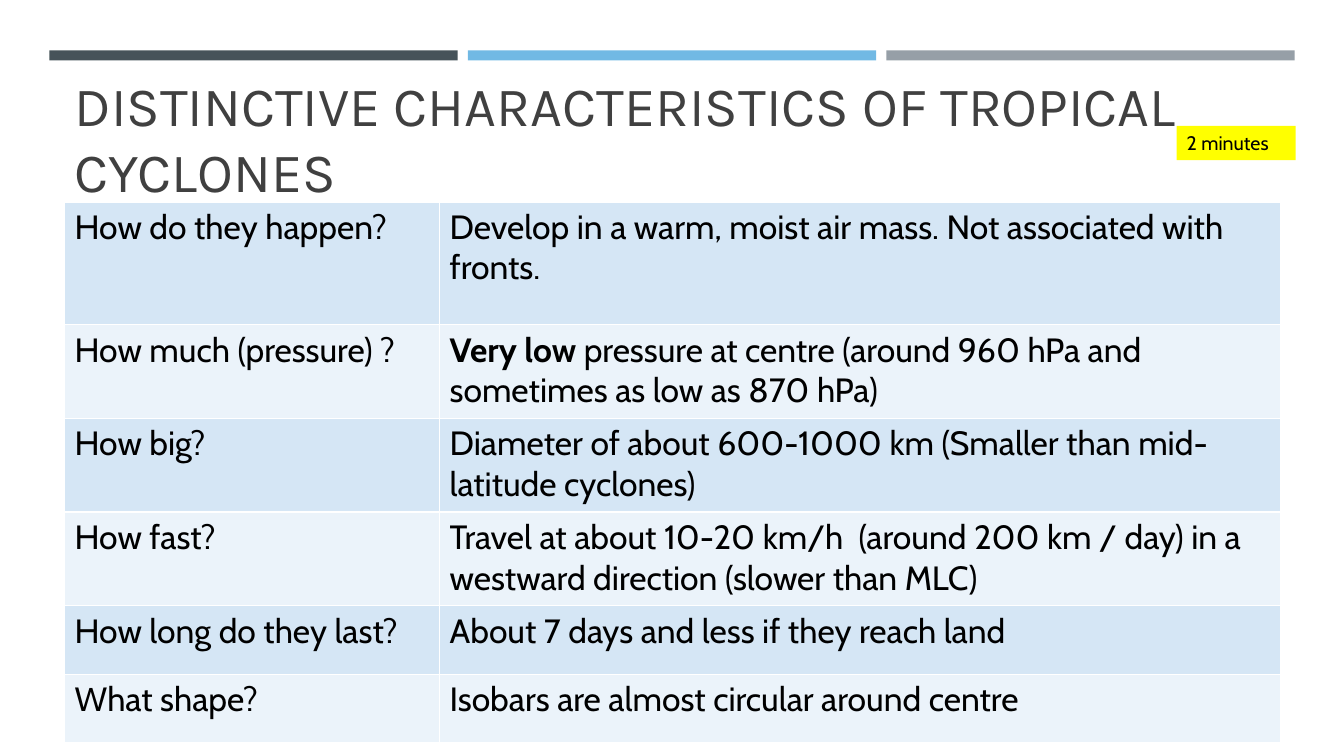
from pptx import Presentation
from pptx.dml.color import RGBColor
from pptx.enum import shapes, text
from pptx.oxml import parse_xml
from pptx.oxml.ns import nsdecls
from pptx.util import Inches, Pt

HUES = {
    "slate": "465359", "sky": "71B9E4", "grey": "969FA7",
    "title": "404040", "ink": "000000", "note": "FFFF00",
    "odd": "D5E6F5", "even": "EBF3FA", "rule": "FFFFFF",
}
FACTS = [
    ("How do they happen?",
     ["Develop in a warm, moist air mass. Not associated with fronts."]),
    ("How much (pressure) ?",
     ["Very low ", "pressure at centre (around 960 hPa and sometimes as low as 870 hPa)"]),
    ("How big?",
     ["Diameter of about 600-1000 km (Smaller than mid-latitude cyclones)"]),
    ("How fast?",
     ["Travel at about 10-20 km/h  (around 200 km / day) in a westward direction (slower than MLC)"]),
    ("How long do they last?", ["About 7 days and less if they reach land"]),
    ("What shape?", ["Isobars are almost circular around centre"]),
]
COLS = [3.72, 8.34]
ROWS = [0.55, 1.22, 0.93, 0.93, 0.93, 0.68, 0.68]


def tint(name):
    return RGBColor.from_string(HUES[name])


def style(run, size, face="Cabin", hue="ink", bold=False):
    run.font.size = Pt(size)
    run.font.name = face
    run.font.bold = bold
    run.font.color.rgb = tint(hue)


def add_bar(slide, left, top, width, height, hue):
    bar = slide.shapes.add_shape(
        shapes.MSO_SHAPE.RECTANGLE,
        Inches(left), Inches(top), Inches(width), Inches(height))
    bar.shadow.inherit = False
    bar.fill.solid()
    bar.fill.fore_color.rgb = tint(hue)
    bar.line.fill.background()
    return bar


def add_title(slide, words):
    box = slide.shapes.add_textbox(
        Inches(0.64), Inches(0.77), Inches(12.06), Inches(1.3))
    frame = box.text_frame
    frame.word_wrap = True
    frame.vertical_anchor = text.MSO_ANCHOR.BOTTOM
    frame.text = words
    style(frame.paragraphs[0].runs[0], 39.6, "Karla", "title")


def add_note(slide, words):
    note = add_bar(slide, 11.67, 1.25, 1.18, 0.34, "note")
    frame = note.text_frame
    frame.word_wrap = True
    frame.vertical_anchor = text.MSO_ANCHOR.TOP
    frame.text = words
    frame.paragraphs[0].alignment = text.PP_ALIGN.LEFT
    style(frame.paragraphs[0].runs[0], 14)


def rule_cell(cell, base):
    props = cell._tc.get_or_add_tcPr()
    sides = {"lnL": 1, "lnR": 1, "lnT": 1, "lnB": base}
    for spot, (side, width) in enumerate(sides.items()):
        props.insert(spot, parse_xml(
            f'<a:{side} {nsdecls("a")} w="{Pt(width)}"><a:solidFill>'
            f'<a:srgbClr val="{HUES["rule"]}"/></a:solidFill></a:{side}>'))


def fill_cell(cell, parts, hue):
    cell.fill.solid()
    cell.fill.fore_color.rgb = tint(hue)
    para = cell.text_frame.paragraphs[0]
    for spot, part in enumerate(parts):
        run = para.add_run()
        run.text = part
        style(run, 24, bold=spot == 0 and len(parts) > 1)


def add_facts(slide):
    frame = slide.shapes.add_table(
        len(ROWS), len(COLS), Inches(0.64), Inches(1.45),
        Inches(sum(COLS)), Inches(sum(ROWS)))
    table = frame.table
    for col, width in zip(table.columns, COLS):
        col.width = Inches(width)
    for row, height in zip(table.rows, ROWS):
        row.height = Inches(height)
    for cell in table.rows[0].cells:
        cell.fill.background()
        rule_cell(cell, 3)
    for num, (ask, reply) in enumerate(FACTS, 1):
        hue = "odd" if num % 2 else "even"
        for cell, parts in zip(table.rows[num].cells, ([ask], reply)):
            fill_cell(cell, parts, hue)
            rule_cell(cell, 1)


def main():
    deck = Presentation()
    deck.slide_width = Inches(13.33)
    deck.slide_height = Inches(7.5)
    slide = deck.slides.add_slide(deck.slide_layouts[6])
    for num, hue in enumerate(("slate", "sky", "grey")):
        add_bar(slide, 0.49 + 4.15 * num, 0.5, 4.05, 0.1, hue)
    add_title(slide, "DISTINCTIVE CHARACTERISTICS OF TROPICAL CYCLONES")
    add_facts(slide)
    add_note(slide, "2 minutes")
    deck.save("out.pptx")


if __name__ == "__main__":
    main()
